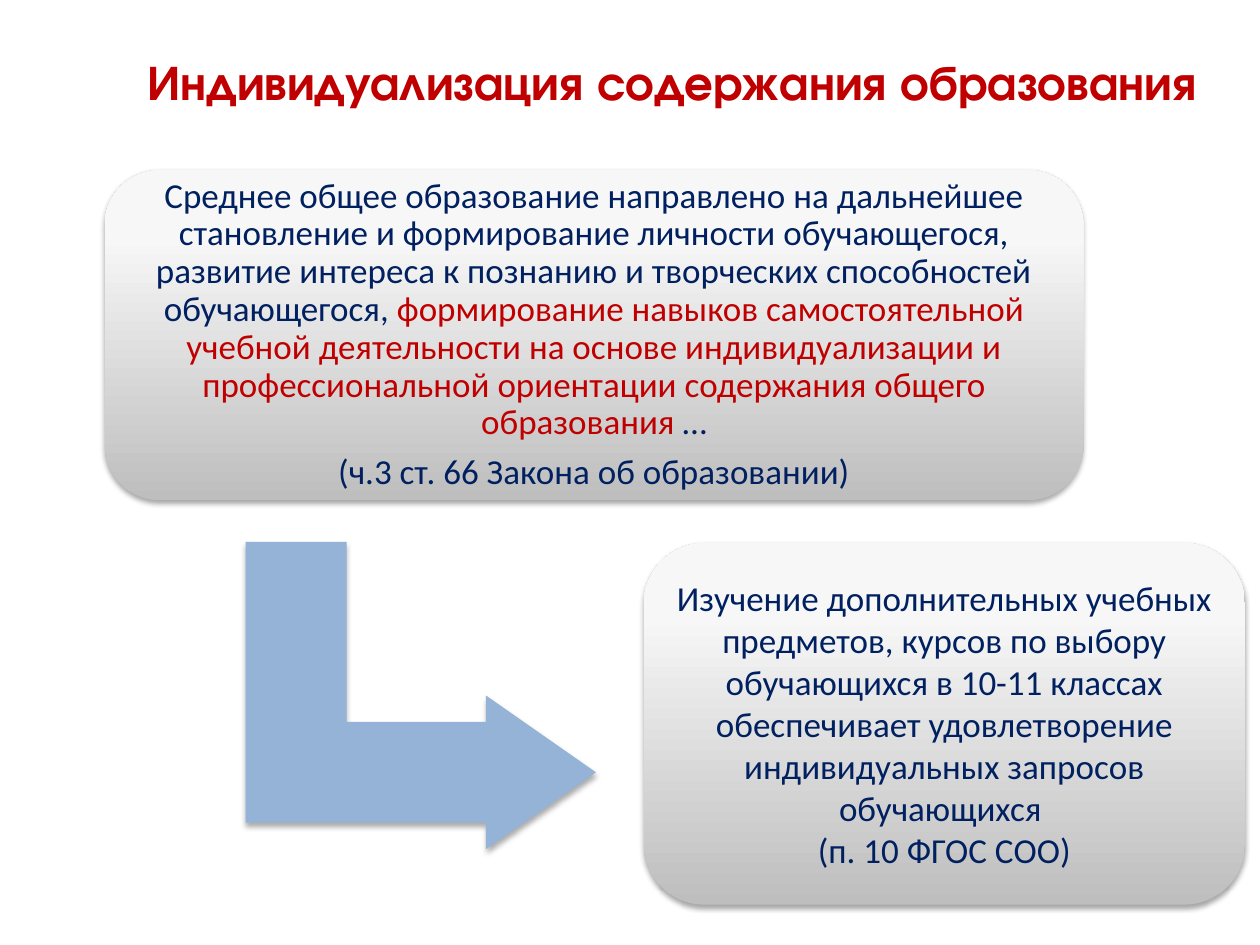
import copy

import pptx
import pptx.dml.color
import pptx.enum.shapes
import pptx.enum.text
import pptx.oxml
import pptx.oxml.ns
import pptx.util

Inches = pptx.util.Inches
Pt = pptx.util.Pt
SHAPES = pptx.enum.shapes.MSO_SHAPE
ANCHOR = pptx.enum.text.MSO_ANCHOR
CENTER = pptx.enum.text.PP_ALIGN.CENTER

COLORS = {
    "red": "C00000",
    "navy": "002060",
    "arrow": "95B3D7",
    "panel_bottom": "BEBEBE",
    "panel_middle": "F7F7F7",
    "panel_top": "F8F8F8",
    "shadow": "000000",
}


def rgb(name):
    return pptx.dml.color.RGBColor.from_string(COLORS[name])


def add_shadow(shape, opacity, blur, distance):
    """Give the shape a soft shadow straight below it."""
    shape.shadow.inherit = False
    effects = shape._element.spPr.find(pptx.oxml.ns.qn("a:effectLst"))
    effects.append(pptx.oxml.parse_xml(
        f'<a:outerShdw {pptx.oxml.ns.nsdecls("a")} blurRad="{Pt(blur)}" '
        f'dist="{Pt(distance)}" dir="5400000" rotWithShape="0">'
        f'<a:srgbClr val="{COLORS["shadow"]}"><a:alpha val="{opacity * 1000}"/>'
        '</a:srgbClr></a:outerShdw>'))


def fill_panel(shape):
    """Shade the shape from grey at the bottom to near white at the top."""
    shape.fill.gradient()
    shape.fill.gradient_angle = 90
    stop_list = shape._element.spPr.find(".//" + pptx.oxml.ns.qn("a:gsLst"))
    stop_list.append(copy.deepcopy(stop_list[-1]))
    stops = [(0, "panel_bottom"), (0.8, "panel_middle"), (1, "panel_top")]
    for stop, (position, color) in zip(shape.fill.gradient_stops, stops):
        stop.position = position
        stop.color.rgb = rgb(color)


def add_title(slide, text):
    title = slide.shapes.title
    title.left, title.top = Inches(0.67), Inches(0.3)
    title.width, title.height = Inches(9.33), Inches(0.69)
    frame = title.text_frame
    frame.text = text
    frame.vertical_anchor = ANCHOR.MIDDLE
    paragraph = frame.paragraphs[0]
    paragraph.alignment = CENTER
    font = paragraph.runs[0].font
    font.name, font.size, font.bold = "TeX Gyre Adventor", Pt(28), True
    font.color.rgb = rgb("red")


def add_panel(slide, box, paragraphs, line_spacing=1.0, space_after=0):
    """Add a rounded panel; each paragraph is a list of (text, colour)."""
    place = [Inches(length) for length in box]
    panel = slide.shapes.add_shape(SHAPES.ROUNDED_RECTANGLE, *place)
    panel.adjustments[0] = 0.167
    panel.line.fill.background()
    fill_panel(panel)
    add_shadow(panel, 35, 3.1, 1.8)

    frame = slide.shapes.add_textbox(*place).text_frame
    frame.word_wrap = True
    frame.vertical_anchor = ANCHOR.MIDDLE
    frame.margin_left = frame.margin_right = Inches(0.08)
    frame.margin_top = frame.margin_bottom = Inches(0.08)
    for index, parts in enumerate(paragraphs):
        paragraph = frame.add_paragraph() if index else frame.paragraphs[0]
        paragraph.alignment = CENTER
        paragraph.line_spacing = line_spacing
        paragraph.space_after = Pt(space_after)
        for text, color in parts:
            run = paragraph.add_run()
            run.text = text
            run.font.name, run.font.size = "Calibri", Pt(20)
            run.font.color.rgb = rgb(color)


def add_bent_arrow(slide):
    arrow = slide.shapes.add_shape(SHAPES.BENT_UP_ARROW, Inches(2.12),
                                   Inches(4.13), Inches(2.44), Inches(2.78))
    arrow.rotation = 90
    for index, value in enumerate((0.328, 0.25, 0.358)):
        arrow.adjustments[index] = value
    arrow.fill.solid()
    arrow.fill.fore_color.rgb = rgb("arrow")
    arrow.line.fill.background()
    add_shadow(arrow, 32, 3.5, 2.2)


def main():
    deck = pptx.Presentation()
    deck.slide_width, deck.slide_height = Inches(10), Inches(7.5)
    slide = deck.slides.add_slide(deck.slide_layouts[5])

    add_title(slide, "Индивидуализация содержания образования")
    add_bent_arrow(slide)
    add_panel(slide, (0.83, 1.35, 7.77, 2.62), [
        [("Среднее общее образование направлено на дальнейшее становление и "
          "формирование личности обучающегося, развитие интереса к познанию и "
          "творческих способностей обучающегося, ", "navy"),
         ("формирование навыков самостоятельной учебной деятельности на основе "
          "индивидуализации и профессиональной ориентации содержания общего "
          "образования ", "red"),
         ("…", "navy")],
        [("(ч.3 ст. 66 Закона об образовании)", "navy")],
    ], line_spacing=0.9, space_after=7)
    add_panel(slide, (5.11, 4.31, 4.77, 2.87), [
        [("Изучение дополнительных учебных предметов, курсов по выбору "
          "обучающихся в 10-11 классах обеспечивает удовлетворение "
          "индивидуальных запросов обучающихся ", "navy")],
        [("(п. 10 ФГОС СОО)", "navy")],
    ])

    deck.save("out.pptx")


if __name__ == "__main__":
    main()
